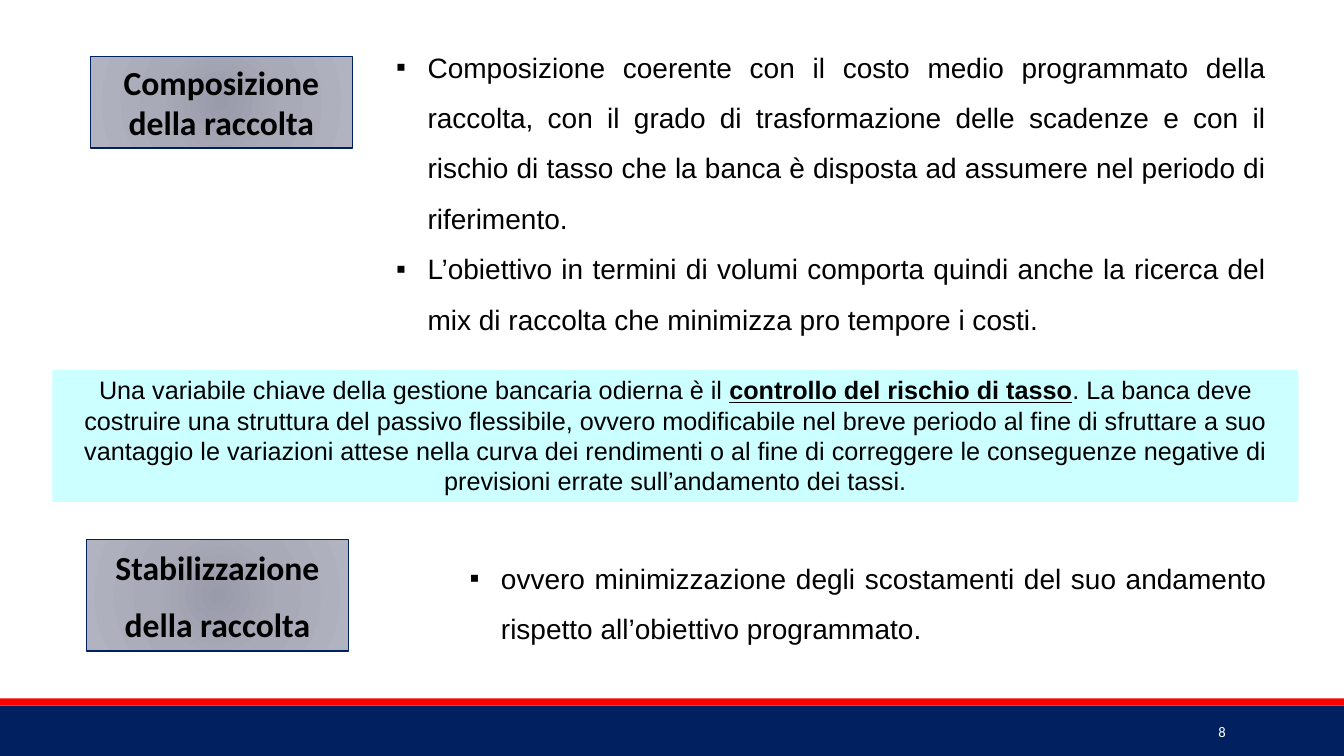
from lxml import etree
from pptx import Presentation, util as u
from pptx.dml.color import RGBColor
from pptx.enum import shapes, text
from pptx.oxml import ns, parse_xml

NAVY, RED, AQUA, BLACK, WHITE = "002060", "FF0000", "CCFFFF", "000000", "FFFFFF"
STOPS = [(0, "9A9BAA"), (45, "A9AAB7"), (100, "B2B3C0")]


def paint(target, color):
    target.rgb = RGBColor.from_string(color)


class Deck:
    """Holds the style and the current slide, and draws each kind of element."""

    def __init__(self):
        self.prs = Presentation()
        self.prs.slide_width, self.prs.slide_height = u.Cm(33.87), u.Cm(19.05)
        self.slide = self.prs.slides.add_slide(self.prs.slide_layouts[3])

    def place(self, shape, left, top, width, height):
        shape.left, shape.top = u.Cm(left), u.Cm(top)
        shape.width, shape.height = u.Cm(width), u.Cm(height)

    def style(self, shape, size, face, color, align, bold=False, anchor=text.MSO_ANCHOR.TOP):
        frame = shape.text_frame
        frame.word_wrap = True
        frame.auto_size = text.MSO_AUTO_SIZE.NONE
        frame.vertical_anchor = anchor
        for para in frame.paragraphs:
            para.alignment = align
            para.space_before = u.Pt(0)
            for run in para.runs:
                run.font.size, run.font.name, run.font.bold = u.Pt(size), face, bold
                paint(run.font.color, color)

    def rect(self, box, color):
        shape = self.slide.shapes.add_shape(shapes.MSO_SHAPE.RECTANGLE, *map(u.Cm, box))
        shape.shadow.inherit = False
        shape.fill.solid()
        paint(shape.fill.fore_color, color)
        shape.line.fill.background()
        return shape

    def label(self, shape, words):
        shape.text_frame.text = words
        self.style(shape, 24, "Calibri", BLACK, text.PP_ALIGN.CENTER, True, text.MSO_ANCHOR.MIDDLE)
        for para in shape.text_frame.paragraphs[1:]:
            para.space_before = u.Pt(12)
        shape.line.width = u.Pt(1)
        shape.line.fill.solid()
        paint(shape.line.color, NAVY)
        shape.fill.gradient()
        stops = "".join(f'<a:gs pos="{pos * 1000}"><a:srgbClr val="{color}"/></a:gs>'
                        for pos, color in STOPS)
        grad = parse_xml(
            f'<a:gradFill {ns.nsdecls("a")}><a:gsLst>{stops}</a:gsLst><a:path path="circle">'
            '<a:fillToRect l="100000" t="100000" r="100000" b="100000"/></a:path></a:gradFill>')
        props = shape.element.spPr
        props.replace(props.find(ns.qn("a:gradFill")), grad)

    def title(self, box, words):
        shape = self.slide.shapes.title
        self.place(shape, *box)
        self.label(shape, words)

    def bullets(self, index, box, items):
        shape = self.slide.placeholders[index]
        self.place(shape, *box)
        shape.text_frame.text = "\n".join(items)
        for para in shape.text_frame.paragraphs:
            props = para._p.get_or_add_pPr()
            props.set("marL", str(u.Cm(0.79)))
            props.set("indent", str(u.Cm(-0.79)))
            etree.SubElement(props, ns.qn("a:buFont")).set("typeface", "Arial")
            etree.SubElement(props, ns.qn("a:buChar")).set("char", "▪")
            para.line_spacing = 1.5
        self.style(shape, 20, "Arial", BLACK, text.PP_ALIGN.JUSTIFY)

    def note(self, box, parts, key):
        shape = self.rect(box, AQUA)
        para = shape.text_frame.paragraphs[0]
        for part in parts:
            para.add_run().text = part
        self.style(shape, 18, "Arial", BLACK, text.PP_ALIGN.CENTER)
        font = para.runs[key].font
        font.bold = font.underline = True

    def number(self, box, words):
        shape = self.slide.shapes.add_textbox(*map(u.Cm, box))
        shape.text_frame.text = words
        self.style(shape, 10.5, "Calibri", WHITE, text.PP_ALIGN.RIGHT,
                   anchor=text.MSO_ANCHOR.MIDDLE)


def main():
    deck = Deck()
    deck.rect((0, 17.78, 33.87, 1.27), NAVY)
    deck.rect((0, 17.6, 33.87, 0.18), RED)
    deck.number((27.51, 17.93, 3.63, 1.02), "8")
    deck.title((2.28, 1.42, 6.6, 2.31), "Composizione della raccolta")
    deck.bullets(1, (9.73, 0.71, 22.43, 7.95), [
        "Composizione coerente con il costo medio programmato della raccolta, con il grado di "
        "trasformazione delle scadenze e con il rischio di tasso che la banca è disposta ad "
        "assumere nel periodo di riferimento.",
        "L’obiettivo in termini di volumi comporta quindi anche la ricerca del mix di raccolta "
        "che minimizza pro tempore i costi."])
    deck.note((1.32, 9.32, 31.4, 3.33), [
        "Una variabile chiave della gestione bancaria odierna è il ",
        "controllo del rischio di tasso",
        ". La banca deve costruire una struttura del passivo flessibile, ovvero modificabile nel "
        "breve periodo al fine di sfruttare a suo vantaggio le variazioni attese nella curva dei "
        "rendimenti o al fine di correggere le conseguenze negative di previsioni errate "
        "sull’andamento dei tassi."], 1)
    deck.label(deck.rect((2.18, 13.59, 6.6, 2.82), NAVY), "Stabilizzazione\ndella raccolta")
    deck.bullets(2, (11.58, 13.59, 20.6, 2.82), [
        "ovvero minimizzazione degli scostamenti del suo andamento rispetto all’obiettivo "
        "programmato."])
    deck.prs.save("out.pptx")


if __name__ == "__main__":
    main()
